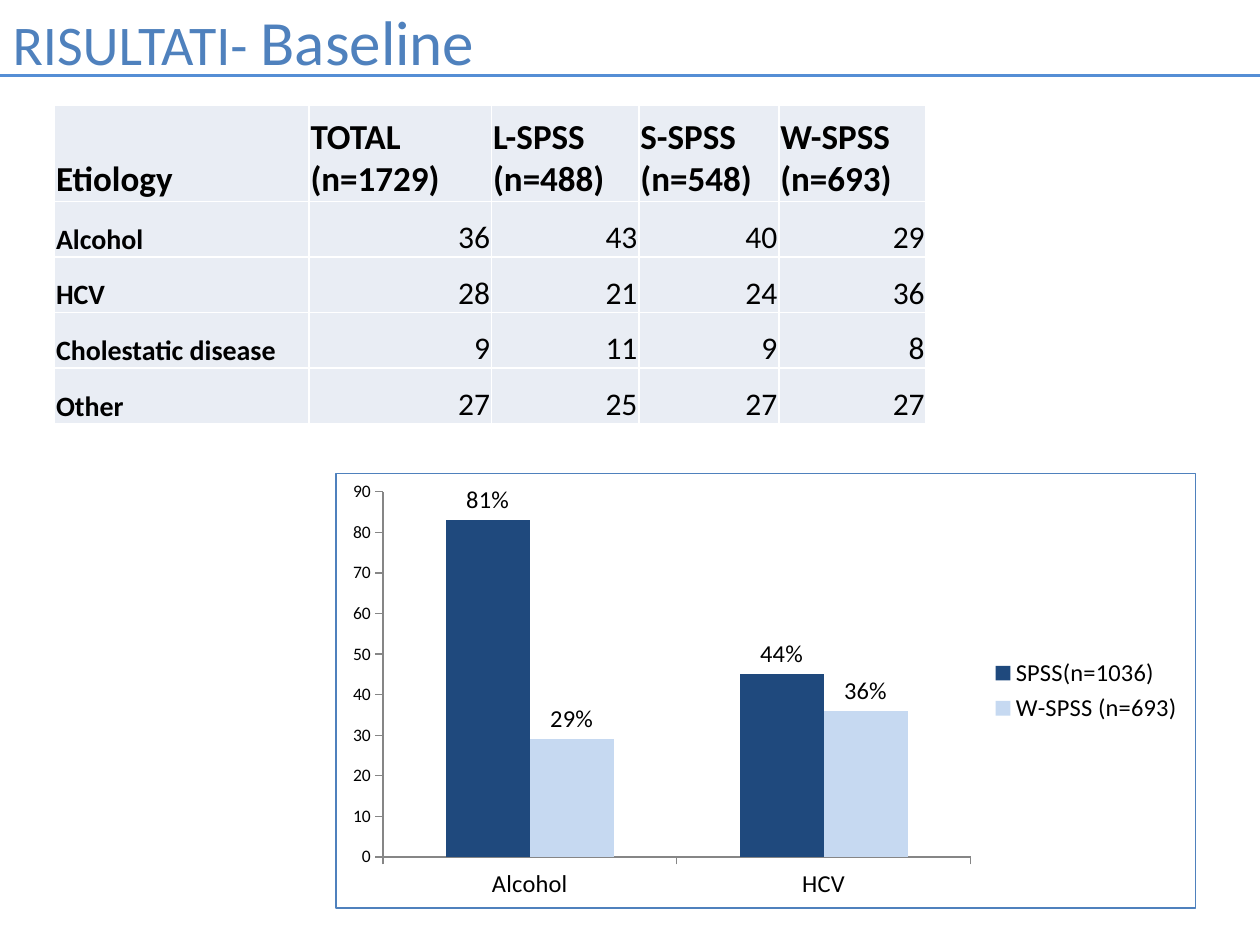
from dataclasses import dataclass

from lxml.etree import SubElement
from pptx import Presentation
from pptx.chart.data import CategoryChartData
from pptx.dml.color import RGBColor as Rgb
from pptx.enum.chart import XL_CHART_TYPE as ChartType
from pptx.enum.chart import XL_LABEL_POSITION as LabelPosition
from pptx.enum.chart import XL_LEGEND_POSITION as LegendPosition
from pptx.enum.chart import XL_TICK_MARK as TickMark
from pptx.enum.text import MSO_ANCHOR as Anchor
from pptx.enum.text import PP_ALIGN as Align
from pptx.oxml import parse_xml
from pptx.oxml.ns import nsdecls, qn
from pptx.util import Cm, Pt


@dataclass(frozen=True)
class Theme:
    """Colours and type sizes of the slide."""

    font: str = "Calibri"
    accent: str = "4F81BD"
    rule: str = "558ED5"
    text: str = "000000"
    cell: str = "E9EDF4"
    border: str = "FFFFFF"
    axis: str = "868686"
    bars: tuple = ("1F497D", "C6D9F1")
    title_size: int = 32
    title_large: int = 36
    header_size: int = 20
    value_size: int = 18
    row_size: int = 16
    label_size: int = 14
    axis_size: int = 10


THEME = Theme()
WIDTH, HEIGHT = Cm(25.4), Cm(19.05)
COLUMN_WIDTHS = (5.13, 3.68, 2.97, 2.82, 2.97)
HEADER_HEIGHT, ROW_HEIGHT = 1.93, 1.12
ETIOLOGY = (
    ("Etiology", "TOTAL (n=1729)", "L-SPSS (n=488)", "S-SPSS (n=548)", "W-SPSS (n=693)"),
    ("Alcohol", 36, 43, 40, 29),
    ("HCV", 28, 21, 24, 36),
    ("Cholestatic disease", 9, 11, 9, 8),
    ("Other", 27, 25, 27, 27),
)
CATEGORIES = ("Alcohol", "HCV")
SERIES = (
    ("SPSS(n=1036)", (83, 45), ("81%", "44%")),
    ("W-SPSS (n=693)", (29, 36), ("29%", "36%")),
)


def style_font(font, size, color=THEME.text, bold=False):
    """Set typeface, size, colour and weight."""
    font.name, font.size, font.bold = THEME.font, Pt(size), bold
    font.color.rgb = Rgb.from_string(color)


def add_title(page):
    """Place the heading with its larger second part."""
    box = page.shapes.title
    box.left, box.top, box.width, box.height = Cm(0), Cm(-0.08), WIDTH, Cm(1.8)
    frame = box.text_frame
    frame.vertical_anchor = Anchor.TOP
    para = frame.paragraphs[0]
    para.alignment = Align.LEFT
    style_font(para.font, THEME.title_size, THEME.accent)
    para.add_run().text = "RISULTATI- "
    span = para.add_run()
    span.text = "Baseline"
    span.font.size = Pt(THEME.title_large)


def add_rule(page, top):
    """Draw a line across the slide."""
    rule = page.shapes.add_connector(1, 0, top, WIDTH, top)
    rule.line.color.rgb = Rgb.from_string(THEME.rule)
    rule.line.width = Pt(2)
    SubElement(rule.element.spPr, qn("a:effectLst"))


def add_borders(cell):
    """Give a cell thin borders on its four sides."""
    properties = cell._tc.get_or_add_tcPr()
    for place, side in enumerate(("lnL", "lnR", "lnT", "lnB")):
        properties.insert(place, parse_xml(
            f'<a:{side} {nsdecls("a")} w="12700"><a:solidFill>'
            f'<a:srgbClr val="{THEME.border}"/></a:solidFill></a:{side}>'))


def fill_cell(cell, value, size):
    """Write a cell, with numbers plain at the right and words bold at the left."""
    is_number = isinstance(value, int)
    cell.text = str(value)
    cell.vertical_anchor = Anchor.BOTTOM
    cell.margin_left = cell.margin_right = cell.margin_top = Cm(0.03)
    cell.margin_bottom = 0
    cell.fill.solid()
    cell.fill.fore_color.rgb = Rgb.from_string(THEME.cell)
    para = cell.text_frame.paragraphs[0]
    para.alignment = Align.RIGHT if is_number else Align.LEFT
    style_font(para.font, THEME.value_size if is_number else size, bold=not is_number)
    add_borders(cell)


def add_etiology_table(page):
    """Build the table of etiologies by group."""
    heights = [HEADER_HEIGHT] + [ROW_HEIGHT] * (len(ETIOLOGY) - 1)
    table = page.shapes.add_table(
        len(ETIOLOGY), len(COLUMN_WIDTHS), Cm(1.1), Cm(2.13),
        Cm(sum(COLUMN_WIDTHS)), Cm(sum(heights))).table
    table.first_row = table.horz_banding = False
    for column, width in zip(table.columns, COLUMN_WIDTHS):
        column.width = Cm(width)
    for index, (row, height, values) in enumerate(zip(table.rows, heights, ETIOLOGY)):
        row.height = Cm(height)
        for cell, value in zip(row.cells, values):
            fill_cell(cell, value, THEME.row_size if index else THEME.header_size)


def style_axis(axis, size):
    """Format an axis with outward ticks and no gridlines."""
    axis.has_major_gridlines = False
    axis.major_tick_mark = TickMark.OUTSIDE
    axis.minor_tick_mark = TickMark.NONE
    axis.format.line.color.rgb = Rgb.from_string(THEME.axis)
    style_font(axis.tick_labels.font, size)


def style_series(series, color, labels):
    """Colour a series and write the label above each bar."""
    series.format.fill.solid()
    series.format.fill.fore_color.rgb = Rgb.from_string(color)
    series.data_labels.show_value = True
    style_font(series.data_labels.font, THEME.label_size)
    for index, text in enumerate(labels):
        label = series.points[index].data_label
        label.position = LabelPosition.OUTSIDE_END
        para = label.text_frame.paragraphs[0]
        para.add_run().text = text
        style_font(para.runs[0].font, THEME.label_size)


def add_frame(chart):
    """Outline the chart area."""
    chart.element.find(qn("c:chart")).addnext(parse_xml(
        f'<c:spPr {nsdecls("c", "a")}><a:noFill/><a:ln w="9525"><a:solidFill>'
        f'<a:srgbClr val="{THEME.accent}"/></a:solidFill></a:ln></c:spPr>'))


def add_comparison_chart(page):
    """Build the column chart comparing the two groups."""
    data = CategoryChartData()
    data.categories = CATEGORIES
    for name, values, _ in SERIES:
        data.add_series(name, values)
    chart = page.shapes.add_chart(
        ChartType.COLUMN_CLUSTERED, Cm(6.76), Cm(9.53), Cm(17.35), Cm(8.79), data).chart
    style_font(chart.font, THEME.axis_size)
    chart.has_title = False
    chart.has_legend = True
    chart.legend.position = LegendPosition.RIGHT
    chart.legend.include_in_layout = False
    style_font(chart.legend.font, THEME.label_size)
    style_axis(chart.category_axis, THEME.label_size)
    style_axis(chart.value_axis, THEME.axis_size)
    plot = chart.plots[0]
    plot.gap_width, plot.overlap, plot.vary_by_categories = 150, 0, False
    for series, color, (_, _, labels) in zip(plot.series, THEME.bars, SERIES):
        style_series(series, color, labels)
    add_frame(chart)


def main():
    """Build and save the slide."""
    deck = Presentation()
    deck.slide_width, deck.slide_height = WIDTH, HEIGHT
    page = deck.slides.add_slide(deck.slide_layouts[5])
    add_rule(page, Cm(1.52))
    add_title(page)
    add_etiology_table(page)
    add_comparison_chart(page)
    deck.save("out.pptx")


if __name__ == "__main__":
    main()
